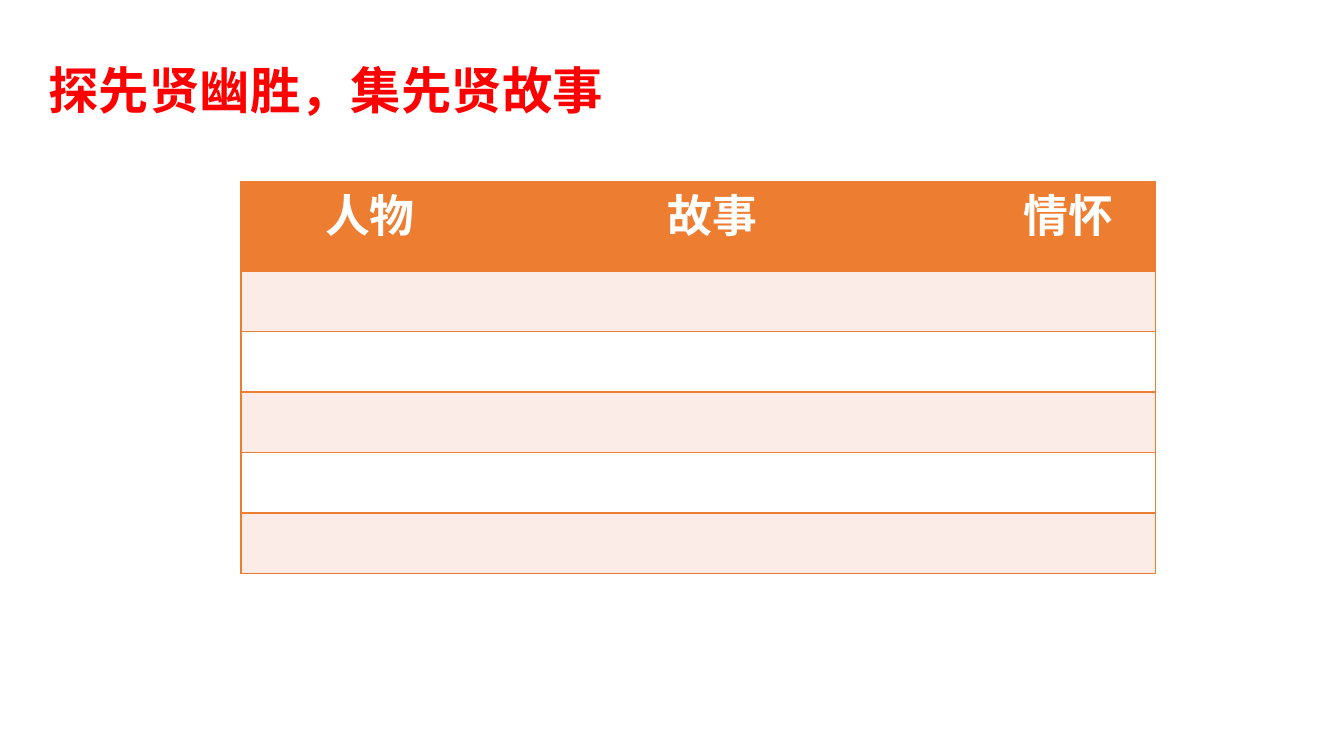
import dataclasses
import typing

import lxml.etree
import pptx
import pptx.dml.color
import pptx.enum.text
import pptx.oxml.ns
import pptx.util

Inches = pptx.util.Inches
Pt = pptx.util.Pt
qn = pptx.oxml.ns.qn

COLORS = {"title": "FF0000", "accent": "ED7D31", "band": "FCECE8", "white": "FFFFFF"}
FONT = "Noto Sans CJK SC"
NO_STYLE = "{2D5ABB26-0587-4C30-8999-92F81FD0307C}"
BODY_ROWS = 5
HEADER_HEIGHT, BODY_HEIGHT = 0.89, 0.6


@dataclasses.dataclass(frozen=True)
class Column:
    heading: str
    width: float


COLUMNS = (Column("人物", 2), Column("故事", 4.79), Column("情怀", 2.28))


def set_values(target: typing.Any, values: dict[str, typing.Any]) -> None:
    for name, value in values.items():
        setattr(target, name, value)


def rgb(color: str) -> pptx.dml.color.RGBColor:
    return pptx.dml.color.RGBColor.from_string(COLORS[color])


def write_text(paragraph: typing.Any, text: str, size: float, color: str) -> None:
    run = paragraph.add_run()
    run.text = text
    set_values(run.font, {"size": Pt(size), "bold": True, "name": FONT})
    run.font.color.rgb = rgb(color)
    properties = run.font._element
    lxml.etree.SubElement(properties, qn("a:ea"), typeface=FONT)


def add_borders(cell: typing.Any, sides: str) -> None:
    properties = cell._tc.get_or_add_tcPr()
    for position, side in enumerate(sides):
        line = properties.makeelement(qn(f"a:ln{side}"), {"w": str(Pt(1))})
        fill = lxml.etree.SubElement(line, qn("a:solidFill"))
        lxml.etree.SubElement(fill, qn("a:srgbClr"), val=COLORS["accent"])
        properties.insert(position, line)


def add_title(slide: typing.Any) -> None:
    title = slide.shapes.title
    set_values(title, {"left": Inches(0.38), "top": Inches(0.54),
                       "width": Inches(6.67), "height": Inches(0.71)})
    set_values(title.text_frame, {
        "word_wrap": True,
        "auto_size": pptx.enum.text.MSO_AUTO_SIZE.SHAPE_TO_FIT_TEXT,
        "vertical_anchor": pptx.enum.text.MSO_ANCHOR.TOP,
    })
    paragraph = title.text_frame.paragraphs[0]
    paragraph.alignment = pptx.enum.text.PP_ALIGN.LEFT
    write_text(paragraph, "探先贤幽胜，集先贤故事", 36, "title")


def write_heading(cell: typing.Any, heading: str) -> None:
    set_values(cell, {
        "vertical_anchor": pptx.enum.text.MSO_ANCHOR.MIDDLE,
        "margin_left": Inches(0.07), "margin_right": Inches(0.07),
        "margin_top": 0, "margin_bottom": 0,
    })
    paragraph = cell.text_frame.paragraphs[0]
    set_values(paragraph, {"alignment": pptx.enum.text.PP_ALIGN.CENTER,
                           "line_spacing": Pt(28)})
    properties = paragraph._p.get_or_add_pPr()
    properties.set("marL", "0")
    properties.set("indent", str(Inches(0.56)))
    write_text(paragraph, heading, 32, "white")


def add_story_table(slide: typing.Any) -> None:
    heights = [HEADER_HEIGHT] + [BODY_HEIGHT] * BODY_ROWS
    width = sum(column.width for column in COLUMNS)
    frame = slide.shapes.add_table(len(heights), len(COLUMNS), Inches(2.39), Inches(1.8),
                                   Inches(width), Inches(sum(heights)))
    table = frame.table
    table._tbl.tblPr.find(qn("a:tableStyleId")).text = NO_STYLE
    for table_column, column in zip(table.columns, COLUMNS):
        table_column.width = Inches(column.width)
    last = len(COLUMNS) - 1
    for row_index, height in enumerate(heights):
        table.rows[row_index].height = Inches(height)
        color = "accent" if row_index == 0 else ("white", "band")[row_index % 2]
        for column_index, column in enumerate(COLUMNS):
            cell = table.cell(row_index, column_index)
            cell.fill.solid()
            cell.fill.fore_color.rgb = rgb(color)
            add_borders(cell, {0: "LTB", last: "RTB"}.get(column_index, "TB"))
            if row_index == 0:
                write_heading(cell, column.heading)


def main() -> None:
    presentation = pptx.Presentation()
    set_values(presentation, {"slide_width": Inches(13.33), "slide_height": Inches(7.5)})
    slide = presentation.slides.add_slide(presentation.slide_layouts[5])
    add_story_table(slide)
    add_title(slide)
    presentation.save("out.pptx")


if __name__ == "__main__":
    main()
